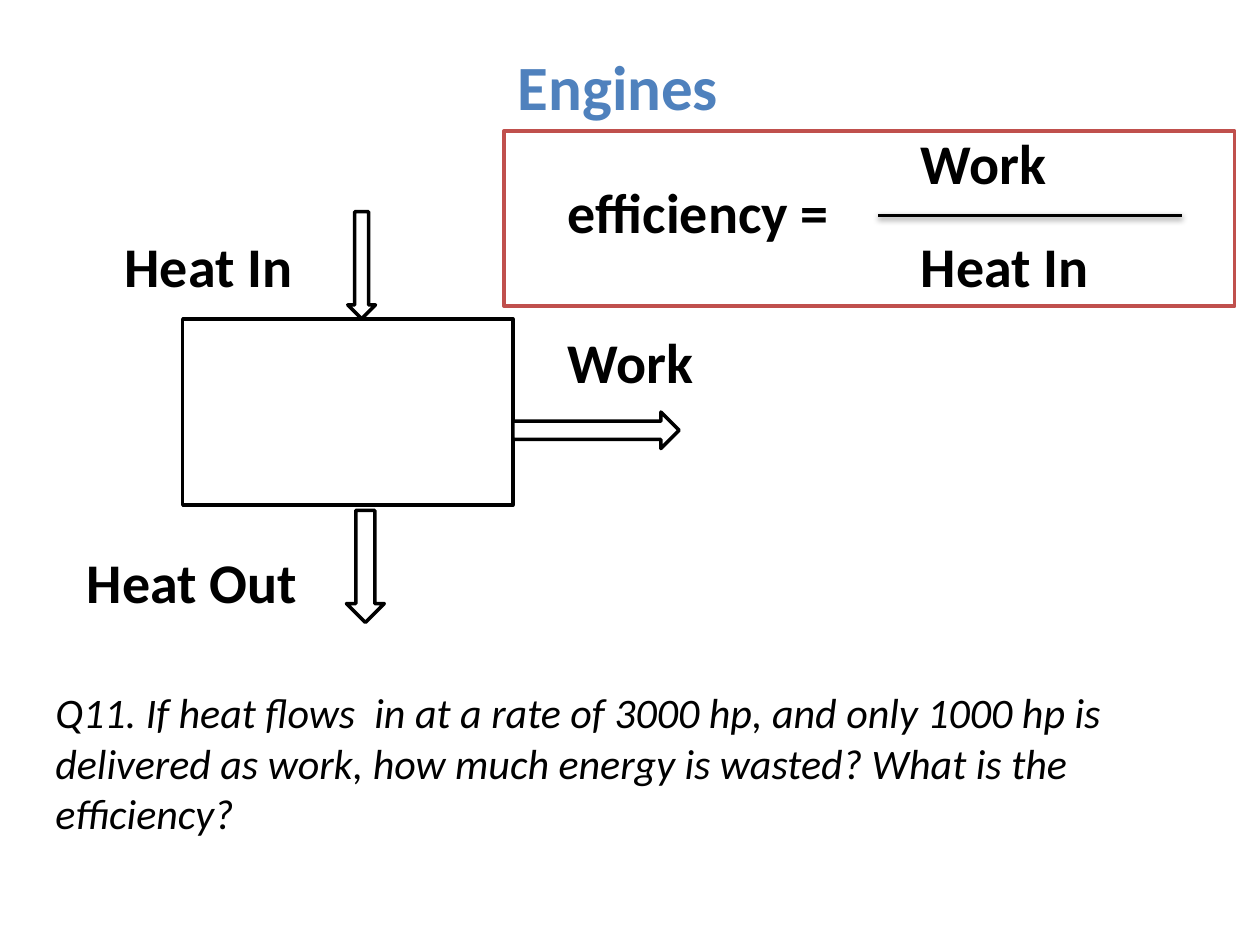
from pptx import Presentation
from pptx.dml.color import RGBColor
from pptx.enum.shapes import MSO_CONNECTOR, MSO_SHAPE
from pptx.enum.text import MSO_AUTO_SIZE, PP_ALIGN
from pptx.util import Inches, Pt

COLORS = {"ink": "000000", "paper": "FFFFFF", "title": "4F81BD", "frame": "C0504D"}

deck = Presentation()
deck.slide_width, deck.slide_height = Inches(10), Inches(7.5)
slide = deck.slides.add_slide(deck.slide_layouts[6])


def color(name):
    return RGBColor.from_string(COLORS[name])


def add_text(text, left, top, width, height=0.64, size=32, ink="ink", bold=True):
    box = slide.shapes.add_textbox(*map(Inches, (left, top, width, height)))
    frame = box.text_frame
    frame.word_wrap = True
    frame.auto_size = MSO_AUTO_SIZE.SHAPE_TO_FIT_TEXT
    para = frame.paragraphs[0]
    para.text = text
    font = para.font
    font.name, font.size, font.bold = "Calibri", Pt(size), bold
    font.italic = not bold
    font.color.rgb = color(ink)
    return frame


# Title
title = add_text("Engines", 4, 0.33, 1.81, 0.71, size=36, ink="title")
title.word_wrap = False
title.paragraphs[0].alignment = PP_ALIGN.CENTER

# Engine box, heat and work arrows, formula frame
for kind, left, top, width, height, fill, line in (
    (MSO_SHAPE.RECTANGLE, 1.45, 2.53, 2.62, 1.48, "paper", "ink"),
    (MSO_SHAPE.DOWN_ARROW, 2.76, 1.68, 0.22, 0.85, "paper", "ink"),
    (MSO_SHAPE.RIGHT_ARROW, 4.07, 3.27, 1.32, 0.29, "paper", "ink"),
    (MSO_SHAPE.DOWN_ARROW, 2.75, 4.05, 0.3, 0.89, "paper", "ink"),
    (MSO_SHAPE.RECTANGLE, 4, 1.04, 5.8, 1.39, None, "frame"),
):
    shape = slide.shapes.add_shape(kind, *map(Inches, (left, top, width, height)))
    shape.shadow.inherit = False
    if fill:
        shape.fill.solid()
        shape.fill.fore_color.rgb = color(fill)
    else:
        shape.fill.background()
    shape.line.color.rgb = color(line)
    shape.line.width = Pt(2)

# Flow labels and formula terms
for text, left, top, width in (
    ("Heat In", 0.89, 1.79, 1.74),
    ("Heat Out", 0.59, 4.3, 2.04),
    ("Work", 4.41, 2.55, 1.66),
    ("efficiency =", 4.41, 1.36, 2.8),
    ("Work", 7.21, 0.97, 1.52),
    ("Heat In", 7.21, 1.79, 1.83),
):
    add_text(text, left, top, width)

# Fraction bar, which keeps the soft shadow of the theme
bar = slide.shapes.add_connector(
    MSO_CONNECTOR.STRAIGHT, Inches(6.97), Inches(1.71), Inches(9.38), Inches(1.71)
)
bar.line.color.rgb = color("ink")
bar.line.width = Pt(2)

# Question
add_text(
    "Q11. If heat flows  in at a rate of 3000 hp, and only 1000 hp is delivered "
    "as work, how much energy is wasted? What is the efficiency?",
    0.34, 5.4, 9.12, 1.31, size=24, bold=False,
)

deck.save("out.pptx")
